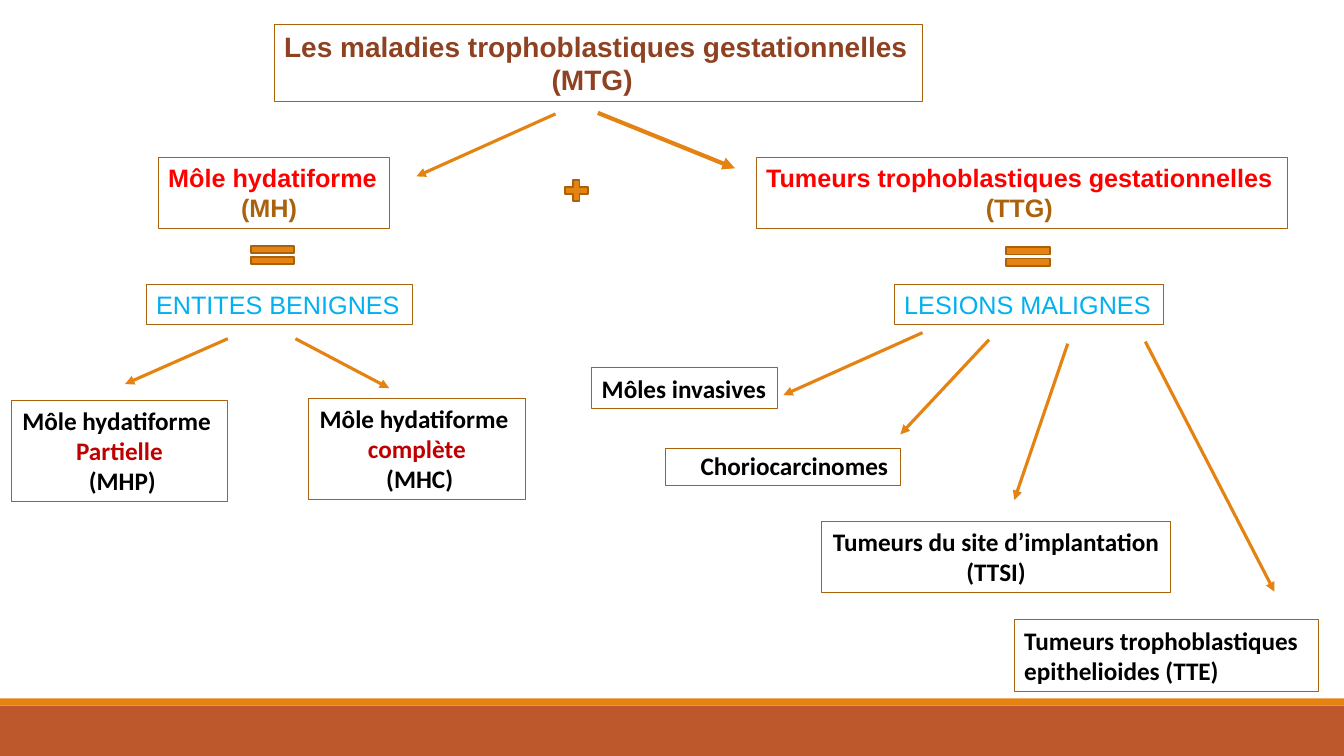
import pptx
import pptx.dml.color
import pptx.enum.shapes
import pptx.enum.text
import pptx.oxml
import pptx.util
from pptx.util import Inches

RGBColor = pptx.dml.color.RGBColor
SHAPES = pptx.enum.shapes.MSO_SHAPE
CENTER = pptx.enum.text.PP_ALIGN.CENTER
LEFT = pptx.enum.text.PP_ALIGN.LEFT

ORANGE = RGBColor(0xE4, 0x83, 0x12)
BRICK = RGBColor(0xBD, 0x58, 0x2C)
BORDER = RGBColor(0xAB, 0x62, 0x0D)
SIGN_BORDER = RGBColor(0xA9, 0x61, 0x0D)
BROWN = RGBColor(0x8E, 0x42, 0x21)
RED = RGBColor(0xFF, 0x00, 0x00)
DARK_RED = RGBColor(0xC0, 0x00, 0x00)
BLUE = RGBColor(0x00, 0xB0, 0xF0)
BLACK = RGBColor(0x00, 0x00, 0x00)


def write_text(paragraph, text, font="Calibri", size=18, color=BLACK, bold=True, align=LEFT):
    paragraph.alignment = align
    run = paragraph.add_run()
    run.text = text
    run.font.name = font
    run.font.size = pptx.util.Pt(size)
    run.font.bold = bold
    run.font.color.rgb = color


class Diagram:
    def __init__(self, slide):
        self.slide = slide

    def solid(self, kind, left, top, width, height, fill, border=None):
        shape = self.slide.shapes.add_shape(
            kind, Inches(left), Inches(top), Inches(width), Inches(height))
        shape.shadow.inherit = False
        shape.fill.solid()
        shape.fill.fore_color.rgb = fill
        if border is None:
            shape.line.fill.background()
        else:
            shape.line.color.rgb = border
            shape.line.width = pptx.util.Pt(1.25)

    def box(self, left, top, width, height, lines, wrap=False, **style):
        shape = self.slide.shapes.add_textbox(
            Inches(left), Inches(top), Inches(width), Inches(height))
        shape.line.color.rgb = BORDER
        shape.line.width = pptx.util.Pt(0.75)
        frame = shape.text_frame
        frame.word_wrap = wrap
        frame.auto_size = pptx.enum.text.MSO_AUTO_SIZE.SHAPE_TO_FIT_TEXT
        for index, (text, changes) in enumerate(lines):
            paragraph = frame.add_paragraph() if index else frame.paragraphs[0]
            write_text(paragraph, text, **{**style, **changes})
        return shape

    def arrow(self, start, end, width=2.25):
        connector = self.slide.shapes.add_connector(
            pptx.enum.shapes.MSO_CONNECTOR.STRAIGHT, *map(Inches, start + end))
        connector.line.color.rgb = ORANGE
        connector.line.width = pptx.util.Pt(width)
        line = connector.line._get_or_add_ln()
        pptx.oxml.ns.qn("a:tailEnd")
        tail = line.makeelement(pptx.oxml.ns.qn("a:tailEnd"), {"type": "triangle"})
        line.append(tail)
        properties = connector._element.spPr
        properties.append(properties.makeelement(pptx.oxml.ns.qn("a:effectLst"), {}))


def build():
    presentation = pptx.Presentation()
    presentation.slide_width = Inches(13.33)
    presentation.slide_height = Inches(7.5)
    diagram = Diagram(presentation.slides.add_slide(presentation.slide_layouts[6]))

    diagram.solid(SHAPES.RECTANGLE, 0, 7, 13.33, 0.5, BRICK)
    diagram.solid(SHAPES.RECTANGLE, 0, 6.93, 13.33, 0.07, ORANGE)

    diagram.box(2.72, 0.24, 6.43, 0.77,
                [("Les maladies trophoblastiques gestationnelles", {}),
                 ("(MTG) ", {"align": CENTER})],
                font="Arial", size=20, color=BROWN)

    for left, width, name, acronym in (
            (1.57, 2.29, "Môle hydatiforme", "(MH) "),
            (7.5, 5.27, "Tumeurs trophoblastiques gestationnelles", "(TTG)")):
        diagram.box(left, 1.56, width, 0.71,
                    [(name, {"color": RED}),
                     (acronym, {"color": BORDER, "align": CENTER})], font="Arial")

    for left, width, nature in ((1.45, 2.64, "ENTITES BENIGNES"),
                                (8.87, 2.67, "LESIONS MALIGNES")):
        diagram.box(left, 2.82, width, 0.4, [(nature, {})],
                    font="Arial", color=BLUE, bold=False)

    for left, top, form, acronym in ((0.11, 3.97, "Partielle", " (MHP)"),
                                     (3.06, 3.95, "complète", " (MHC)")):
        diagram.box(left, top, 2.15, 1.01,
                    [("Môle hydatiforme ", {}), (form, {"color": DARK_RED}), (acronym, {})],
                    align=CENTER)

    diagram.box(5.87, 3.65, 1.84, 0.4, [("Môles invasives", {})])
    choriocarcinoma = diagram.box(6.6, 4.45, 2.33, 0.37, [("Choriocarcinomes", {})])
    paragraph = choriocarcinoma.text_frame.paragraphs[0]
    paragraph.line_spacing = 0.9
    paragraph._p.get_or_add_pPr().set("marL", str(Inches(0.25)))
    diagram.box(8.15, 5.17, 3.46, 0.71,
                [("Tumeurs du site d’implantation", {}), ("(TTSI)", {})], align=CENTER)
    diagram.box(10.06, 6.15, 3.02, 0.71,
                [("Tumeurs trophoblastiques", {}), ("epithelioides (TTE)", {})], wrap=True)

    diagram.solid(SHAPES.MATH_PLUS, 5.56, 1.75, 0.31, 0.28, ORANGE, SIGN_BORDER)
    diagram.solid(SHAPES.MATH_EQUAL, 2.41, 2.38, 0.58, 0.3, ORANGE, SIGN_BORDER)
    diagram.solid(SHAPES.MATH_EQUAL, 9.9, 2.38, 0.59, 0.33, ORANGE, SIGN_BORDER)

    diagram.arrow((5.93, 1.12), (7.29, 1.67), width=3)
    for start, end in (((5.51, 1.13), (4.13, 1.75)),
                       ((2.26, 3.36), (1.24, 3.81)),
                       ((2.93, 3.36), (3.86, 3.85)),
                       ((9.15, 3.3), (7.77, 3.92)),
                       ((9.81, 3.37), (8.93, 4.31)),
                       ((10.59, 3.41), (10.06, 4.96)),
                       ((11.36, 3.39), (12.64, 5.87))):
        diagram.arrow(start, end)

    presentation.save("out.pptx")


if __name__ == "__main__":
    build()
